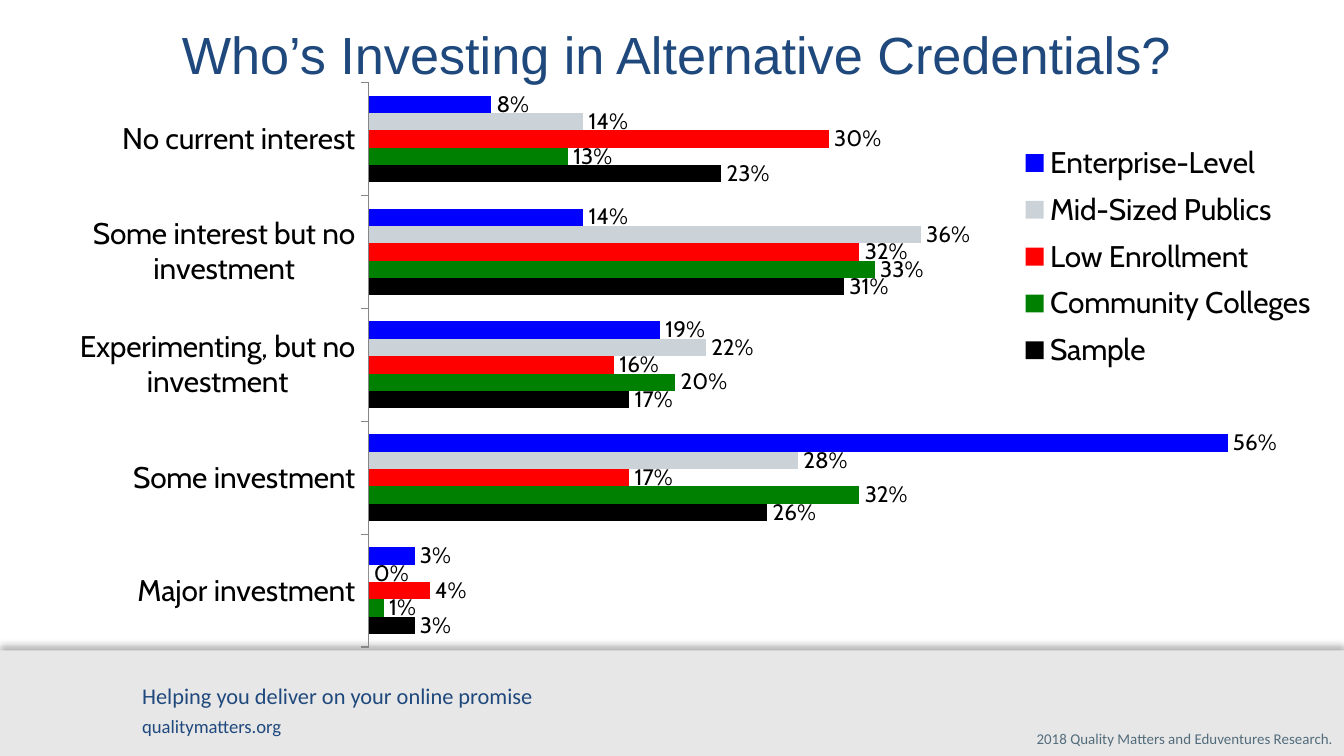
import pptx
import pptx.chart.data
import pptx.dml.color
import pptx.enum.chart
import pptx.enum.shapes
import pptx.enum.text
import pptx.oxml
import pptx.util

W = 10
H = W * 9 / 16
NAVY = "1F497D"
NS_A = "http://schemas.openxmlformats.org/drawingml/2006/main"
NS_C = "http://schemas.openxmlformats.org/drawingml/2006/chart"
CATEGORIES = ["Major investment", "Some investment", "Experimenting, but no investment",
              "Some interest but no investment", "No current interest"]
SERIES = [
    ("Sample", "000000", (0.03, 0.26, 0.17, 0.31, 0.23)),
    ("Community Colleges", "008000", (0.01, 0.32, 0.2, 0.33, 0.13)),
    ("Low Enrollment", "FF0000", (0.04, 0.17, 0.16, 0.32, 0.3)),
    ("Mid-Sized Publics", "CBD3D8", (0, 0.28, 0.22, 0.36, 0.14)),
    ("Enterprise-Level", "0000FF", (0.03, 0.56, 0.19, 0.14, 0.08)),
]


def rgb(value):
    return pptx.dml.color.RGBColor.from_string(value)


def inches(*lengths):
    return [pptx.util.Inches(v) for v in lengths]


def set_all(obj, values):
    for name, value in values.items():
        setattr(obj, name, value)


def set_font(font, size, name, color):
    set_all(font, {"size": pptx.util.Pt(size), "name": name})
    font.color.rgb = rgb(color)


def set_frame(tf, margins, **values):
    """Set the left, top, right and bottom margins and other frame values."""
    sides = ("margin_left", "margin_top", "margin_right", "margin_bottom")
    set_all(tf, dict(zip(sides, inches(*margins)), word_wrap=True, **values))


def add_line(p, text, size, font, color, **values):
    r = p.add_run()
    r.text = text
    set_font(r.font, size, font, color)
    set_all(p, values)


def add_title(s, box):
    sp = s.shapes.title
    set_all(sp, dict(zip(("left", "top", "width", "height"), inches(*box))))
    set_frame(sp.text_frame, [0.1] * 4, auto_size=pptx.enum.text.MSO_AUTO_SIZE.NONE,
              vertical_anchor=pptx.enum.text.MSO_ANCHOR.BOTTOM)
    add_line(sp.text_frame.paragraphs[0], "Who’s Investing in Alternative Credentials?",
             28, "Arial", NAVY, alignment=pptx.enum.text.PP_ALIGN.CENTER, line_spacing=0.9)


def add_footer(s, box):
    x, y, w, h = box
    band = s.shapes.add_shape(pptx.enum.shapes.MSO_SHAPE.RECTANGLE, *inches(*box))
    band.fill.solid()
    band.fill.fore_color.rgb = rgb("E7E7E7")
    band.line.fill.background()
    band._element.spPr.append(pptx.oxml.parse_xml(
        f'<a:effectLst xmlns:a="{NS_A}"><a:outerShdw blurRad="50800" dist="38100" '
        'dir="16200000" algn="b" rotWithShape="0"><a:srgbClr val="000000">'
        '<a:alpha val="30000"/></a:srgbClr></a:outerShdw></a:effectLst>'))

    tf = s.shapes.add_textbox(
        *inches(x + 0.096 * w, y + 0.24 * h, 0.55 * w, 0.65 * h)).text_frame
    set_frame(tf, (0.1, 0.05, 0.1, 0.05))
    add_line(tf.paragraphs[0], "Helping you deliver on your online promise",
             12, "Calibri", NAVY)
    add_line(tf.add_paragraph(), "qualitymatters.org", 10, "Calibri", NAVY,
             space_before=pptx.util.Pt(3))

    tf = s.shapes.add_textbox(
        *inches(x + 0.735 * w, y + 0.69 * h, 0.257 * w, 0.31 * h)).text_frame
    set_frame(tf, (0.1, 0.05, 0, 0.05))
    add_line(tf.paragraphs[0], "2018 Quality Matters and Eduventures Research.",
             8, "Calibri", "526C7C", alignment=pptx.enum.text.PP_ALIGN.RIGHT)


def place(parent, x, y, w, h, inner=False):
    """Fix a chart part at the given shares of the chart's size."""
    for old in parent.findall(f"{{{NS_C}}}layout"):
        parent.remove(old)
    target = '<c:layoutTarget val="inner"/>' if inner else ""
    modes = "".join(f'<c:{k}Mode val="edge"/>' for k in "xy")
    sizes = "".join(f'<c:{k} val="{v}"/>' for k, v in zip("xywh", (x, y, w, h)))
    layout = pptx.oxml.parse_xml(
        f'<c:layout xmlns:c="{NS_C}"><c:manualLayout>{target}{modes}{sizes}'
        '</c:manualLayout></c:layout>')
    parent.insert(0 if inner else 1, layout)


def add_investment_chart(s, box):
    data = pptx.chart.data.CategoryChartData(number_format="0%")
    data.categories = CATEGORIES
    for name, _, values in SERIES:
        data.add_series(name, values)
    enums = pptx.enum.chart
    chart = s.shapes.add_chart(enums.XL_CHART_TYPE.BAR_CLUSTERED, *inches(*box), data).chart
    set_all(chart, {"has_title": False, "has_legend": True})
    set_font(chart.font, 18, "Cabin", "000000")

    set_all(chart.value_axis, {"visible": False, "has_major_gridlines": False,
                               "minimum_scale": 0, "maximum_scale": 0.6})
    axis = chart.category_axis
    axis.major_tick_mark = enums.XL_TICK_MARK.OUTSIDE
    axis.format.line.color.rgb = rgb("868686")
    set_font(axis.tick_labels.font, 16, "Cabin", "000000")

    set_all(chart.legend, {"position": enums.XL_LEGEND_POSITION.RIGHT,
                           "include_in_layout": False})
    set_font(chart.legend.font, 16, "Cabin", "000000")
    place(chart.legend._element, 0.762, 0.085, 0.23, 0.41)

    plot = chart.plots[0]
    set_all(plot, {"gap_width": 150, "overlap": 0, "vary_by_categories": False})
    place(chart._chartSpace.chart.plotArea, 0.256, 0, 0.715, 0.941, inner=True)
    for series, (_, color, _) in zip(plot.series, SERIES):
        series.format.fill.solid()
        series.format.fill.fore_color.rgb = rgb(color)
        labels = series.data_labels
        set_all(labels, {"show_value": True, "number_format": "0%",
                         "number_format_is_linked": False,
                         "position": enums.XL_LABEL_POSITION.OUTSIDE_END})
        set_font(labels.font, 12, "Cabin", "000000")


def main():
    prs = pptx.Presentation()
    prs.slide_width, prs.slide_height = inches(W, H)
    s = prs.slides.add_slide(prs.slide_layouts[5])
    add_footer(s, (0, 4.84, W, H - 4.84))
    add_title(s, (0.29, 0.17, 9.48, 0.57))
    add_investment_chart(s, (0.29, 0.61, 9.58, 4.47))
    prs.save("out.pptx")


if __name__ == "__main__":
    main()
